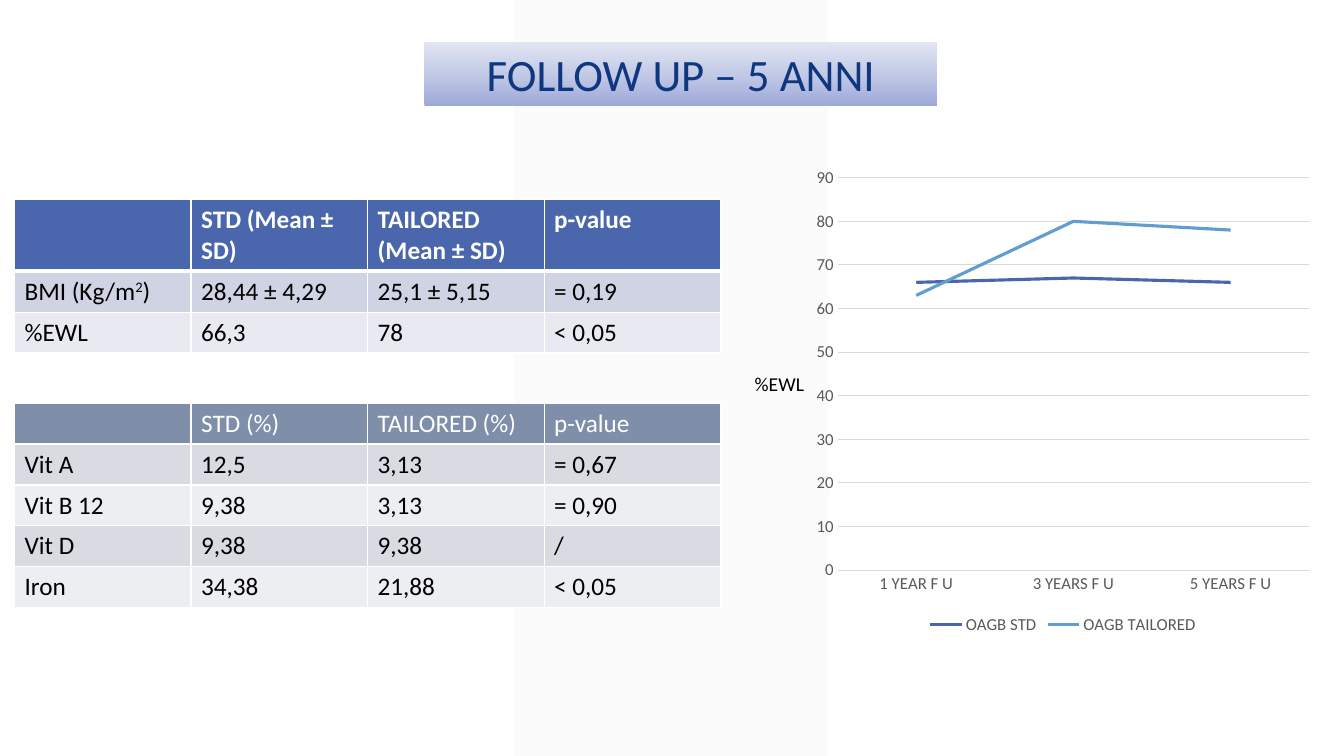
from dataclasses import dataclass

import lxml.etree
import pptx
import pptx.chart.data
import pptx.dml.color
import pptx.enum.chart
import pptx.enum.shapes
import pptx.enum.text
import pptx.oxml
import pptx.oxml.ns
import pptx.util

Pt = pptx.util.Pt
qn = pptx.oxml.ns.qn


@dataclass(frozen=True)
class Theme:
    font: str = "Calibri"
    title_color: str = "0F377F"
    title_gradient: tuple = ((0, "9CA8D9"), (50, "C3CAE6"), (100, "E2E5F2"))
    band: str = "F2F2F2"
    white: str = "FFFFFF"
    black: str = "000000"
    axis_text: str = "595959"
    grid: str = "D9D9D9"
    standard: str = "4A66AC"
    tailored: str = "629DD1"
    title_size: float = 32
    table_size: float = 18
    label_size: float = 14
    chart_size: float = 12


@dataclass(frozen=True)
class ResultTable:
    top: float
    row_heights: tuple
    rows: tuple
    header_fill: str
    band_fills: tuple
    header_bold: bool
    header_rule: float


@dataclass(frozen=True)
class Series:
    name: str
    values: tuple
    color: str


THEME = Theme()
TABLE_LEFT, COLUMN_WIDTH = 10.4, 126.1

TABLES = (
    ResultTable(
        142.6, (50.4, 29.2, 29.2),
        (("", "STD (Mean ± SD)", "TAILORED (Mean ± SD)", "p-value"),
         ("BMI (Kg/m^2^)", "28,44 ± 4,29", "25,1 ± 5,15", "= 0,19"),
         ("%EWL", "66,3", "78", "< 0,05")),
        "4A66AC", ("D0D3E3", "E9EAF1"), True, 3),
    ResultTable(
        288, (28.8,) * 5,
        (("", "STD (%)", "TAILORED (%)", "p-value"),
         ("Vit A", "12,5", "3,13", "= 0,67"),
         ("Vit B 12", "9,38", "3,13", "= 0,90"),
         ("Vit D", "9,38", "9,38", "/"),
         ("Iron", "34,38", "21,88", "< 0,05")),
        "7F8FA9", ("D8DBE2", "ECEEF1"), False, 1),
)

FOLLOW_UPS = ("1 YEAR F U", "3 YEARS F U", "5 YEARS F U")
EWL_SERIES = (
    Series("OAGB STD", (66, 67, 66), THEME.standard),
    Series("OAGB TAILORED", (63, 80, 78), THEME.tailored),
)


def rgb(color: str):
    return pptx.dml.color.RGBColor.from_string(color)


def format_font(font, size: float, color: str, bold: bool = False) -> None:
    font.name = THEME.font
    font.size = Pt(size)
    font.bold = bold
    font.color.rgb = rgb(color)


def write_text(frame, text: str, *, size: float, color: str = THEME.black,
               bold: bool = False, align=pptx.enum.text.PP_ALIGN.LEFT) -> None:
    """Write one paragraph; text between carets becomes superscript."""
    paragraph = frame.paragraphs[0]
    paragraph.alignment = align
    format_font(paragraph.font, size, color, bold)
    for index, piece in enumerate(text.split("^")):
        if not piece:
            continue
        run = paragraph.add_run()
        run.text = piece
        format_font(run.font, size, color, bold)
        if index % 2:
            run._r.get_or_add_rPr().set("baseline", "30000")


def add_band(slide) -> None:
    band = slide.shapes.add_shape(
        pptx.enum.shapes.MSO_SHAPE.PARALLELOGRAM, Pt(367.2), Pt(0), Pt(224.6), Pt(540))
    band.adjustments[0] = 0
    band.shadow.inherit = False
    band.fill.solid()
    band.fill.fore_color.rgb = rgb(THEME.band)
    band.line.fill.background()
    color = band.element.spPr.find(f"{qn('a:solidFill')}/{qn('a:srgbClr')}")
    lxml.etree.SubElement(color, qn("a:alpha"), val="30000")
    band.element.getparent().insert(2, band.element)


def add_title(slide) -> None:
    title = slide.shapes.title
    title.left, title.top, title.width, title.height = Pt(303.2), Pt(29.8), Pt(366.4), Pt(46)
    stops = "".join(
        f'<a:gs pos="{position * 1000}"><a:srgbClr val="{color}"/></a:gs>'
        for position, color in THEME.title_gradient)
    title.element.spPr.append(pptx.oxml.parse_xml(
        f'<a:gradFill {pptx.oxml.ns.nsdecls("a")} rotWithShape="1"><a:gsLst>{stops}</a:gsLst>'
        '<a:lin ang="16200000" scaled="0"/></a:gradFill>'))
    frame = title.text_frame
    frame.word_wrap = True
    frame.auto_size = pptx.enum.text.MSO_AUTO_SIZE.NONE
    frame.vertical_anchor = pptx.enum.text.MSO_ANCHOR.MIDDLE
    write_text(frame, "FOLLOW UP – 5 ANNI", size=THEME.title_size,
               color=THEME.title_color, align=pptx.enum.text.PP_ALIGN.CENTER)


def set_borders(cell, top: float, bottom: float) -> None:
    properties = cell._tc.get_or_add_tcPr()
    for side, width in (("L", 1), ("R", 1), ("T", top), ("B", bottom)):
        line = lxml.etree.SubElement(properties, qn(f"a:ln{side}"), w=str(Pt(width)))
        fill = lxml.etree.SubElement(line, qn("a:solidFill"))
        lxml.etree.SubElement(fill, qn("a:srgbClr"), val=THEME.white)


def add_result_table(slide, result: ResultTable) -> None:
    columns = len(result.rows[0])
    table = slide.shapes.add_table(
        len(result.rows), columns, Pt(TABLE_LEFT), Pt(result.top),
        Pt(columns * COLUMN_WIDTH), Pt(sum(result.row_heights))).table
    for column in table.columns:
        column.width = Pt(COLUMN_WIDTH)
    for row_index, texts in enumerate(result.rows):
        table.rows[row_index].height = Pt(result.row_heights[row_index])
        header = row_index == 0
        fill = result.header_fill if header else result.band_fills[(row_index - 1) % 2]
        for column_index, text in enumerate(texts):
            cell = table.cell(row_index, column_index)
            set_borders(cell, top=result.header_rule if row_index == 1 else 1,
                        bottom=result.header_rule if header else 1)
            cell.fill.solid()
            cell.fill.fore_color.rgb = rgb(fill)
            write_text(cell.text_frame, text, size=THEME.table_size,
                       color=THEME.white if header else THEME.black,
                       bold=header and result.header_bold)


def add_ewl_chart(slide) -> None:
    data = pptx.chart.data.CategoryChartData()
    data.categories = FOLLOW_UPS
    for series in EWL_SERIES:
        data.add_series(series.name, series.values)
    chart = slide.shapes.add_chart(
        pptx.enum.chart.XL_CHART_TYPE.LINE, Pt(576), Pt(113), Pt(366.5), Pt(343.4), data).chart
    format_font(chart.font, THEME.chart_size, THEME.axis_text)
    chart.has_title = False
    chart.has_legend = True
    chart.legend.position = pptx.enum.chart.XL_LEGEND_POSITION.BOTTOM
    chart.legend.include_in_layout = False
    chart.plots[0].vary_by_categories = False
    for line, series in zip(chart.series, EWL_SERIES):
        line.smooth = False
        line.marker.style = pptx.enum.chart.XL_MARKER_STYLE.NONE
        line.format.line.color.rgb = rgb(series.color)
        line.format.line.width = Pt(2.25)
    values, categories = chart.value_axis, chart.category_axis
    for axis in (values, categories):
        axis.major_tick_mark = pptx.enum.chart.XL_TICK_MARK.NONE
        format_font(axis.tick_labels.font, THEME.chart_size, THEME.axis_text)
    values.minimum_scale, values.maximum_scale, values.major_unit = 0, 90, 10
    values.format.line.fill.background()
    for rule in (values.major_gridlines.format.line, categories.format.line):
        rule.color.rgb = rgb(THEME.grid)
        rule.width = Pt(0.75)


def main() -> None:
    presentation = pptx.Presentation()
    presentation.slide_width, presentation.slide_height = Pt(960), Pt(540)
    slide = presentation.slides.add_slide(presentation.slide_layouts.get_by_name("Title Only"))
    add_band(slide)
    add_title(slide)
    for result in TABLES:
        add_result_table(slide, result)
    add_ewl_chart(slide)
    axis_label = slide.shapes.add_textbox(Pt(532), Pt(262), Pt(175.7), Pt(24.5))
    axis_label.text_frame.word_wrap = True
    write_text(axis_label.text_frame, "%EWL", size=THEME.label_size)
    presentation.save("out.pptx")


if __name__ == "__main__":
    main()
